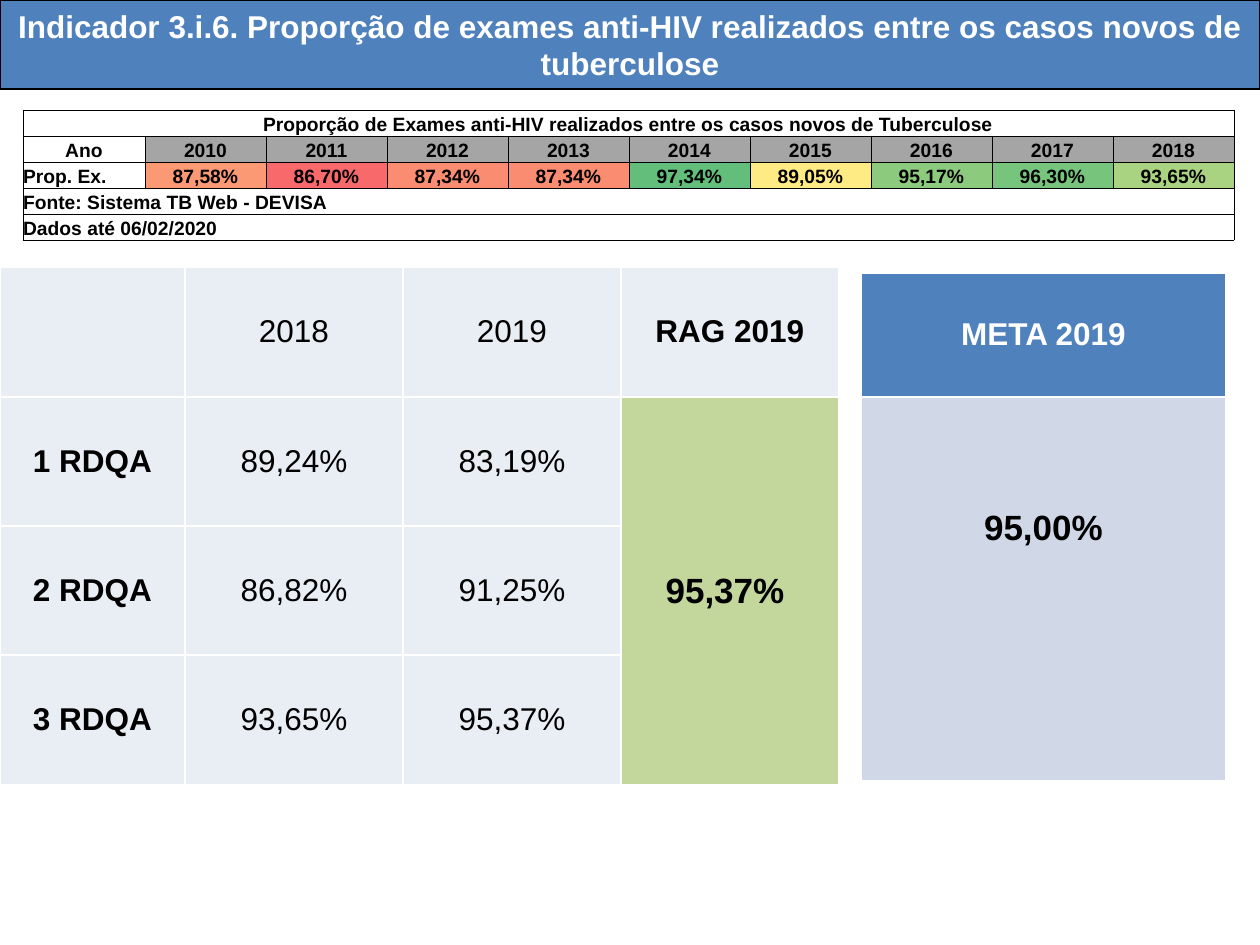
from dataclasses import dataclass

from lxml import etree
from pptx import Presentation
from pptx.dml.color import RGBColor
from pptx.enum.shapes import MSO_SHAPE
from pptx.enum.text import MSO_ANCHOR, PP_ALIGN
from pptx.oxml.ns import qn
from pptx.util import Pt

RECTANGLE = MSO_SHAPE.RECTANGLE
TOP, MIDDLE, BOTTOM = MSO_ANCHOR.TOP, MSO_ANCHOR.MIDDLE, MSO_ANCHOR.BOTTOM
LEFT, CENTER = PP_ALIGN.LEFT, PP_ALIGN.CENTER

PX_PER_INCH = 126
FONT = "Arial"
BLACK, WHITE, BLUE = "000000", "FFFFFF", "4F81BD"
PALE, META_FILL, GREEN, GRAY = "E9EDF4", "D0D8E8", "C3D69B", "A5A5A5"


@dataclass
class Entry:
    text: str = ""
    fill: str | None = None
    size: int = 18
    bold: bool = False
    color: str = BLACK
    align: PP_ALIGN = CENTER
    anchor: MSO_ANCHOR = MIDDLE
    margin_top: int = 0
    row_span: int = 1
    column_span: int = 1


@dataclass
class Grid:
    left: int
    top: int
    columns: list[int]
    rows: list[int]
    border_color: str
    border_points: float
    entries: list[list[Entry]]


def px(length: int) -> int:
    return round(length * 914400 / PX_PER_INCH)


def rgb(color: str) -> RGBColor:
    return RGBColor.from_string(color)


def write(para, text: str, size: int, bold: bool, color: str, align) -> None:
    para.alignment = align
    span = para.add_run()
    span.text = text
    span.font.name = FONT
    span.font.size = Pt(size)
    span.font.bold = bold
    span.font.color.rgb = rgb(color)


def add_borders(cell, color: str, points: float) -> None:
    properties = cell._tc.get_or_add_tcPr()
    for side in ("a:lnL", "a:lnR", "a:lnT", "a:lnB"):
        line = etree.SubElement(properties, qn(side), w=str(Pt(points)))
        fill = etree.SubElement(line, qn("a:solidFill"))
        etree.SubElement(fill, qn("a:srgbClr"), val=color)


def fill_cell(cell, entry: Entry) -> None:
    cell.margin_left = cell.margin_right = cell.margin_bottom = 0
    cell.margin_top = px(entry.margin_top)
    cell.vertical_anchor = entry.anchor
    if entry.fill:
        cell.fill.solid()
        cell.fill.fore_color.rgb = rgb(entry.fill)
    else:
        cell.fill.background()
    para = cell.text_frame.paragraphs[0]
    if entry.text:
        write(para, entry.text, entry.size, entry.bold, entry.color, entry.align)
    else:
        para._p.get_or_add_endParaRPr().set("sz", str(entry.size * 100))


def add_grid(page, grid: Grid) -> None:
    frame = page.shapes.add_table(
        len(grid.rows), len(grid.columns), px(grid.left), px(grid.top),
        px(sum(grid.columns)), px(sum(grid.rows)))
    table = frame.table
    table.first_row = table.horz_banding = False
    for column, width in zip(table.columns, grid.columns):
        column.width = px(width)
    for row, height in zip(table.rows, grid.rows):
        row.height = px(height)
    for r, entries in enumerate(grid.entries):
        for c, entry in enumerate(entries):
            cell = table.cell(r, c)
            add_borders(cell, grid.border_color, grid.border_points)
            fill_cell(cell, entry)
            if entry.row_span * entry.column_span > 1:
                cell.merge(table.cell(r + entry.row_span - 1, c + entry.column_span - 1))


def add_title(page, text: str) -> None:
    box = page.shapes.add_shape(RECTANGLE, 0, 0, px(1260), px(89))
    box.shadow.inherit = False
    box.fill.solid()
    box.fill.fore_color.rgb = rgb(BLUE)
    box.line.color.rgb = rgb(BLACK)
    box.line.width = Pt(0.75)
    box.text_frame.word_wrap = True
    box.text_frame.vertical_anchor = MIDDLE
    write(box.text_frame.paragraphs[0], text, 18, True, WHITE, CENTER)


def quarter_grid() -> Grid:
    header = [Entry(fill=PALE), Entry("2018", PALE), Entry("2019", PALE),
              Entry("RAG 2019", PALE, bold=True)]
    reports = [("1 RDQA", "89,24%", "83,19%"),
               ("2 RDQA", "86,82%", "91,25%"),
               ("3 RDQA", "93,65%", "95,37%")]
    body = [[Entry(name, PALE, bold=True), Entry(before, PALE), Entry(after, PALE),
             Entry(fill=GREEN)] for name, before, after in reports]
    body[0][3] = Entry("95,37% ", GREEN, 20, True, row_span=3)
    return Grid(0, 267, [185, 218, 218, 218], [130, 129, 129, 130],
                WHITE, 1, [header] + body)


def target_grid() -> Grid:
    return Grid(861, 273, [365], [124, 384], WHITE, 1, [
        [Entry("META 2019", BLUE, bold=True, color=WHITE)],
        [Entry("95,00%", META_FILL, 20, True, anchor=TOP, margin_top=112)]])


def history_grid() -> Grid:
    values = [("87,58%", "FA9974"), ("86,70%", "F8696B"), ("87,34%", "F98C71"),
              ("87,34%", "F98C71"), ("97,34%", "63BE7B"), ("89,05%", "FFEB84"),
              ("95,17%", "8CCA7E"), ("96,30%", "77C47D"), ("93,65%", "A9D380")]
    count = len(values) + 1

    def small(text: str = "", fill: str | None = None, align=CENTER, span: int = 1) -> Entry:
        return Entry(text, fill, 11, True, align=align, anchor=BOTTOM, column_span=span)

    def full_row(text: str, align) -> list[Entry]:
        return [small(text, align=align, span=count)] + [small() for _ in values]

    title = "Proporção de Exames anti-HIV realizados entre os casos novos de Tuberculose"
    years = [small(str(2010 + i), GRAY) for i in range(len(values))]
    return Grid(23, 110, [122] + [121] * len(values), [26] * 5, BLACK, 0.5, [
        full_row(title, CENTER),
        [small("Ano")] + years,
        [small("Prop. Ex.", align=LEFT)] + [small(text, fill) for text, fill in values],
        full_row("Fonte: Sistema TB Web - DEVISA", LEFT),
        full_row("Dados até 06/02/2020", LEFT)])


def main() -> None:
    deck = Presentation()
    deck.slide_width, deck.slide_height = px(1260), px(945)
    page = deck.slides.add_slide(deck.slide_layouts[6])
    # Title band
    add_title(page, "Indicador 3.i.6. Proporção de exames anti-HIV realizados "
                    "entre os casos novos de tuberculose")
    # Quarterly results, target and yearly history
    for grid in (quarter_grid(), target_grid(), history_grid()):
        add_grid(page, grid)
    deck.save("out.pptx")


if __name__ == "__main__":
    main()
